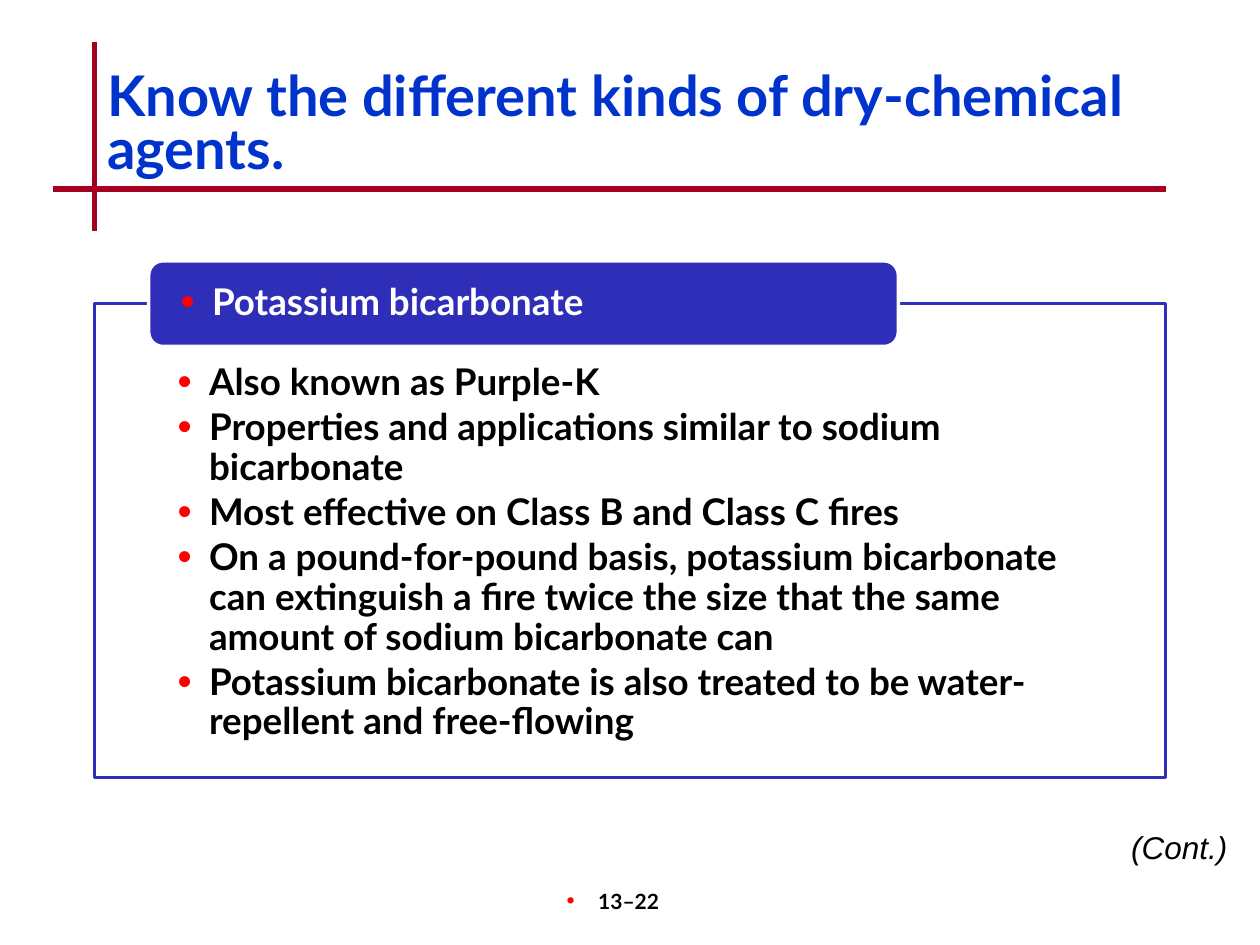
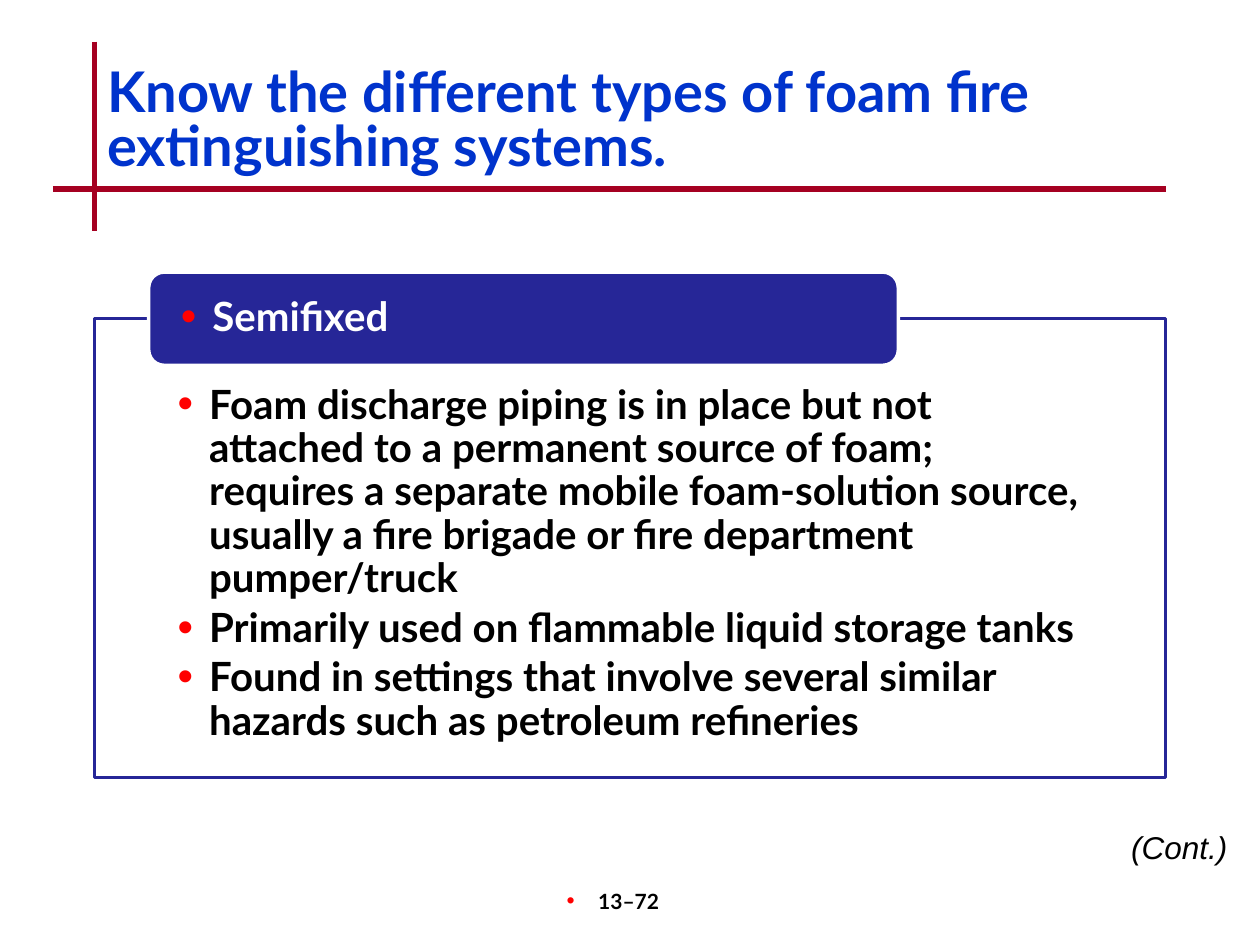
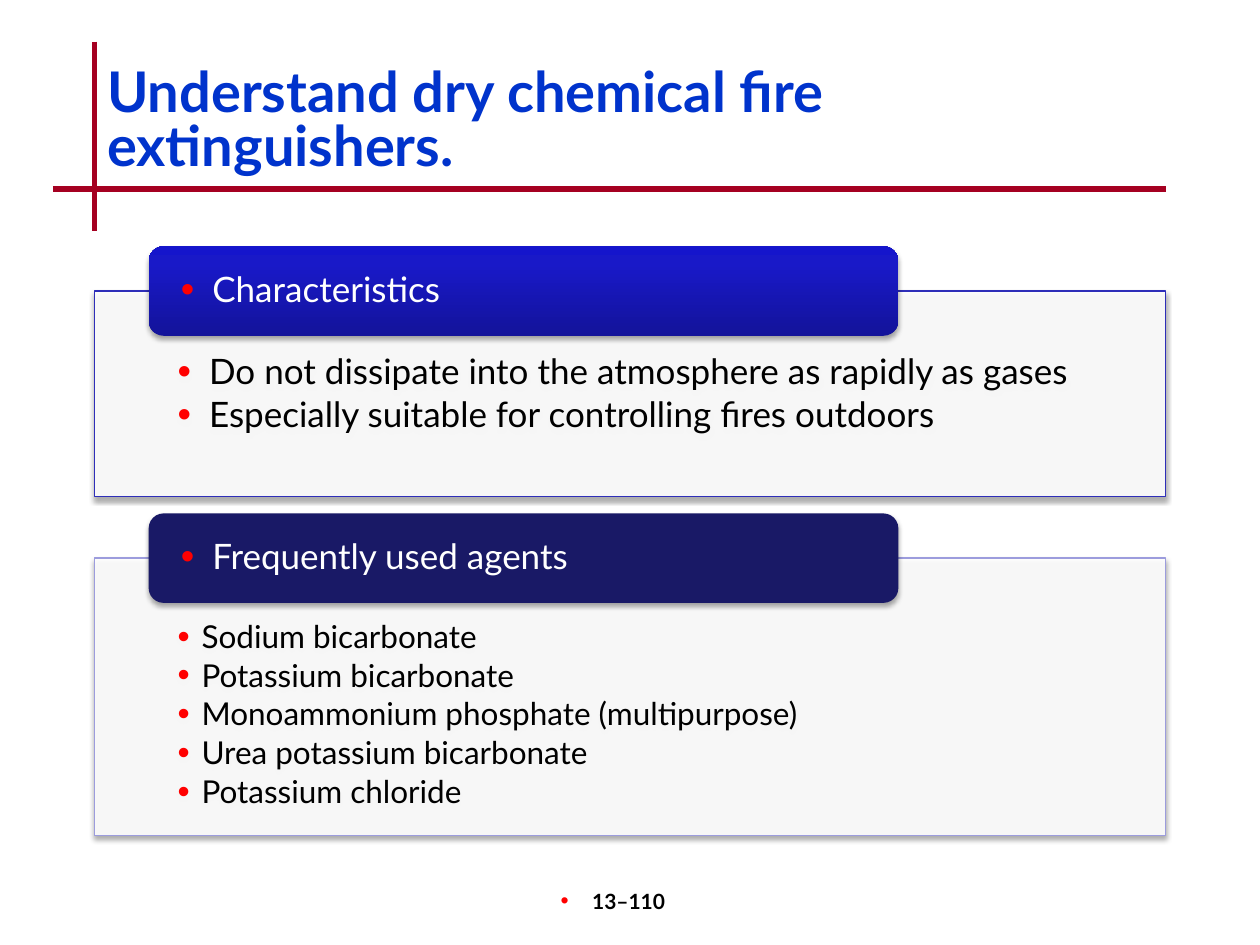
from pptx import Presentation
from pptx.dml.color import RGBColor
from pptx.enum.shapes import MSO_CONNECTOR, MSO_SHAPE
from pptx.enum.text import MSO_ANCHOR, MSO_AUTO_SIZE, PP_ALIGN
from pptx.oxml import parse_xml
from pptx.oxml.ns import nsdecls, qn
from pptx.util import Inches, Pt
from lxml.etree import SubElement

FONT = "Lato"
BLACK, WHITE, RED = "000000", "FFFFFF", "FF0000"
BLUE, MAROON = "0033CC", "A50021"
LEFT, WIDTH = 0.75, 8.5
SHEEN = [(0, "13139A"), (80, "1919C8"), (100, "1515CC")]


def color(code):
    return RGBColor.from_string(code)


def write(para, text, size, code=BLACK, bold=False, italic=False, face=FONT):
    run = para.add_run()
    run.text = text
    font = run.font
    font.name, font.size = face, Pt(size)
    font.bold, font.italic = bold, italic
    font.color.rgb = color(code)


def bullet(para, indent, scale=110):
    props = para._p.get_or_add_pPr()
    props.set("marL", str(Inches(indent)))
    props.set("indent", str(-Inches(indent)))
    tint = SubElement(props, qn("a:buClr"))
    SubElement(tint, qn("a:srgbClr"), val=RED)
    SubElement(props, qn("a:buSzPct"), val=str(scale * 1000))
    SubElement(props, qn("a:buFont"), typeface="Arial")
    SubElement(props, qn("a:buChar"), char="•")


def listing(frame, items, size, code, bold, indent, after):
    for i, item in enumerate(items):
        para = frame.paragraphs[0] if i == 0 else frame.add_paragraph()
        bullet(para, indent)
        para.alignment = PP_ALIGN.LEFT
        para.line_spacing = 0.9
        para.space_after = Pt(round(size * after, 1))
        write(para, item, size, code, bold)


def rule(slide, start, end):
    line = slide.shapes.add_connector(
        MSO_CONNECTOR.STRAIGHT, *map(Inches, start + end))
    line.line.color.rgb = color(MAROON)
    line.line.width = Pt(3)
    SubElement(line._element.spPr, qn("a:effectLst"))


def label(slide, left, top, width, height):
    box = slide.shapes.add_textbox(*map(Inches, (left, top, width, height)))
    box.text_frame.word_wrap = True
    return box.text_frame


def panel(slide, kind, left, top, width, height, fill, edge, weight):
    shape = slide.shapes.add_shape(
        kind, *map(Inches, (left, top, width, height)))
    shape.shadow.inherit = False
    shape.fill.solid()
    shape.fill.fore_color.rgb = color(fill)
    if edge:
        shape.line.color.rgb = color(edge)
        shape.line.width = Pt(weight)
    else:
        shape.line.fill.background()
    return shape


def inset(frame, side, top, anchor):
    frame.word_wrap = True
    frame.vertical_anchor = anchor
    frame.margin_left = frame.margin_right = Inches(side)
    frame.margin_top, frame.margin_bottom = Inches(top), 0


def shade(shape):
    effect = shape._element.spPr.find(qn("a:effectLst"))
    effect.append(parse_xml(
        f'<a:outerShdw {nsdecls("a")} blurRad="{Pt(3.1)}" dist="{Pt(1.8)}" '
        'dir="5400000" rotWithShape="0"><a:srgbClr val="000000">'
        '<a:alpha val="35000"/></a:srgbClr></a:outerShdw>'))


def blend(shape, stops):
    shape.fill.gradient()
    shape.fill.gradient_angle = 90
    group = shape._element.spPr.find(".//" + qn("a:gsLst"))
    for stop in list(group):
        group.remove(stop)
    for place, code in stops:
        stop = SubElement(group, qn("a:gs"), pos=str(place * 1000))
        SubElement(stop, qn("a:srgbClr"), val=code)


def card(slide, head, items, top, height, tab, fill, size, pad=0.5,
         edge=None, small=None, indent=0.25, raised=False, stops=None):
    bold = not raised
    body = panel(slide, MSO_SHAPE.RECTANGLE, LEFT, top, WIDTH, height,
                 WHITE, edge or fill, 0.75 if raised else 2)
    tint = body._element.spPr.find(qn("a:solidFill"))[0]
    SubElement(tint, qn("a:alpha"), val="90000")
    inset(body.text_frame, 0.66, pad, MSO_ANCHOR.TOP)
    listing(body.text_frame, items, small or size, BLACK, bold, indent, 0.15)

    crown = panel(slide, MSO_SHAPE.ROUNDED_RECTANGLE, 1.18, top - tab / 2,
                  5.95, tab, fill, None if raised else WHITE, 2)
    inset(crown.text_frame, 0.22, 0, MSO_ANCHOR.MIDDLE)
    listing(crown.text_frame, [head], size, WHITE, bold, 0.25, 0.35)
    if stops:
        blend(crown, stops)
    if raised:
        shade(body)
        shade(crown)


def base(deck, title, page, top=0.5):
    slide = deck.slides.add_slide(deck.slide_layouts[5])
    rule(slide, (LEFT, 0.33), (LEFT, 1.83))
    rule(slide, (0.42, 1.5), (LEFT + WIDTH, 1.5))

    name = slide.shapes.title
    name.left, name.top = Inches(LEFT), Inches(top)
    name.width, name.height = Inches(WIDTH), Inches(1)
    frame = name.text_frame
    frame.auto_size = MSO_AUTO_SIZE.NONE
    frame.vertical_anchor = MSO_ANCHOR.TOP
    para = frame.paragraphs[0]
    para.alignment = PP_ALIGN.LEFT
    para.line_spacing = 0.8
    write(para, title, 32, BLUE, True)

    foot = label(slide, 3.92, 7, 2.08, 0.5)
    foot.margin_right = Inches(0.29)
    para = foot.paragraphs[0]
    bullet(para, 0.25)
    para.alignment = PP_ALIGN.CENTER
    write(para, page, 12, bold=True)
    return slide


def more(slide):
    para = label(slide, 8.17, 6.52, 1.67, 0.4).paragraphs[0]
    para.alignment = PP_ALIGN.RIGHT
    write(para, "(Cont.)", 18, italic=True, face="Arial")


def main():
    deck = Presentation()
    deck.slide_width, deck.slide_height = Inches(10), Inches(7.5)

    slide = base(deck, "Know the different kinds of dry-chemical agents.",
                 "13–22", 0.53)
    card(slide, "Potassium bicarbonate", [
        "Also known as Purple-K",
        "Properties and applications similar to sodium bicarbonate",
        "Most effective on Class B and Class C fires",
        "On a pound-for-pound basis, potassium bicarbonate can extinguish "
        "a fire twice the size that the same amount of sodium bicarbonate can",
        "Potassium bicarbonate is also treated to be water-repellent "
        "and free-flowing",
    ], 2.41, 3.76, 0.68, "2E2EB9", 21, pad=0.48)
    more(slide)

    slide = base(
        deck, "Know the different types of foam fire extinguishing systems.",
        "13–72")
    card(slide, "Semifixed", [
        "Foam discharge piping is in place but not attached to a permanent "
        "source of foam; requires a separate mobile foam-solution source, "
        "usually a fire brigade or fire department pumper/truck",
        "Primarily used on flammable liquid storage tanks",
        "Found in settings that involve several similar hazards such as "
        "petroleum refineries",
    ], 2.53, 3.64, 0.74, "262697", 23, pad=0.52)
    more(slide)

    slide = base(deck, "Understand dry chemical fire extinguishers.", "13–110")
    card(slide, "Characteristics", [
        "Do not dissipate into the atmosphere as rapidly as gases",
        "Especially suitable for controlling fires outdoors",
    ], 2.31, 1.63, 0.71, "1515CC", 20, edge="2E2EB9", raised=True, stops=SHEEN)
    card(slide, "Frequently used agents", [
        "Sodium bicarbonate",
        "Potassium bicarbonate",
        "Monoammonium phosphate (multipurpose)",
        "Urea potassium bicarbonate",
        "Potassium chloride",
    ], 4.43, 2.2, 0.71, "191966", 20, edge="9C9CDD", small=18, indent=0.19,
        raised=True)

    deck.save("out.pptx")


if __name__ == "__main__":
    main()
